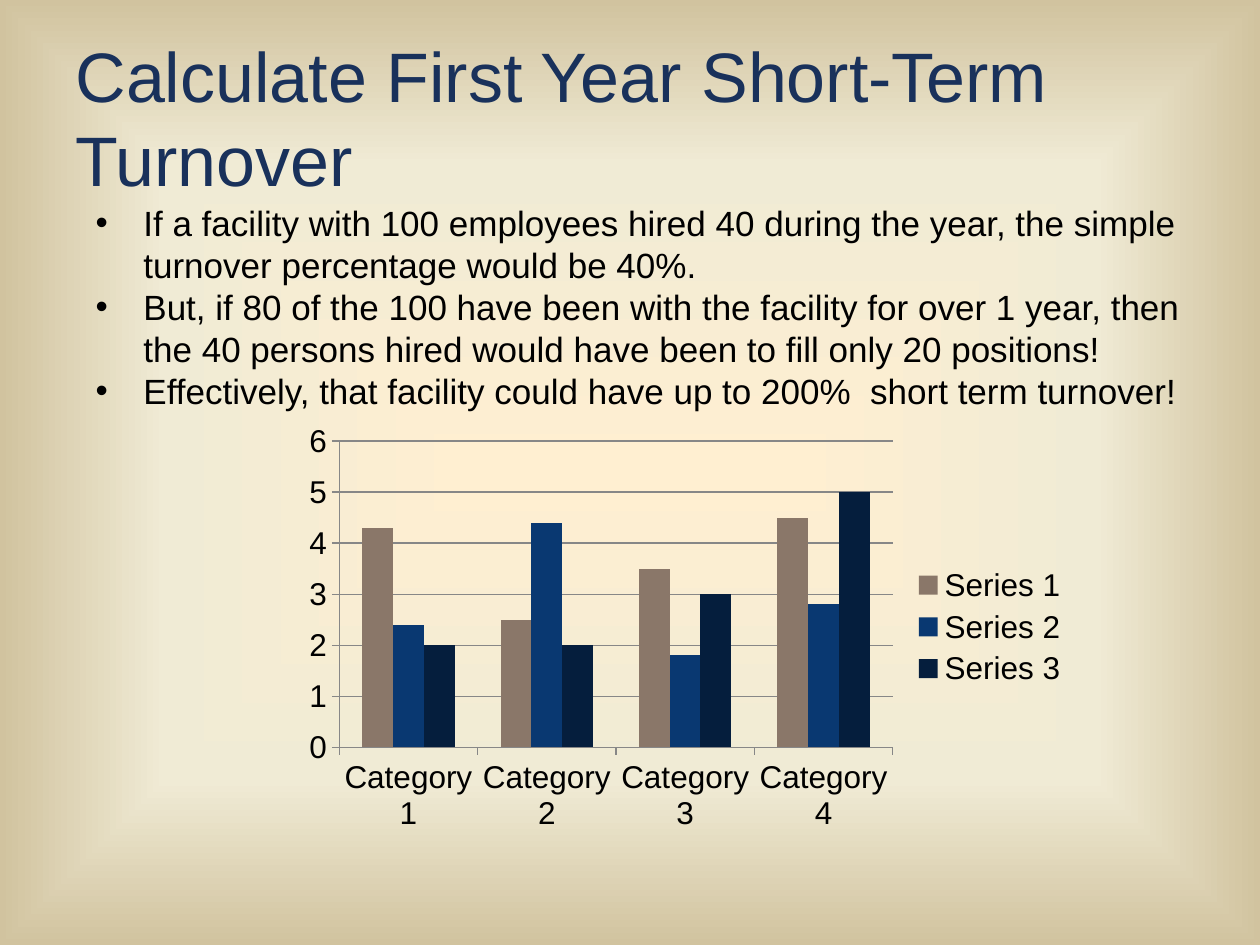
from pptx import Presentation
from pptx.chart.data import CategoryChartData as Data
from pptx.dml.color import RGBColor as RGB
from pptx.enum.chart import XL_CHART_TYPE as Kind, XL_LEGEND_POSITION as Spot, XL_TICK_MARK as Tick
from pptx.enum.text import MSO_ANCHOR as Anchor, PP_ALIGN as Align
from pptx.oxml import parse_xml as to_xml
from pptx.oxml.ns import nsdecls
from pptx.util import Inches, Pt

WIDE, HIGH = 10, 7.5
FONT = "Arial"
NAVY = RGB(0x19, 0x31, 0x5B)
BLACK = RGB(0, 0, 0)
GRAY = RGB(0x87, 0x87, 0x87)
CREAM = RGB(0xFF, 0xEF, 0xD1)
SAND = RGB(0xF0, 0xEB, 0xD5)
TAN = RGB(0xD1, 0xC3, 0x9F)
STOPS = [(0, CREAM), (65, SAND), (100, TAN)]

POINTS = [
    "If a facility with 100 employees hired 40 during the year, the simple turnover percentage would be 40%.",
    "But, if 80 of the 100 have been with the facility for over 1 year, then the 40 persons hired would have been to fill only 20 positions!",
    "Effectively, that facility could have up to 200%  short term turnover!",
]
GROUPS = [f"Category {n}" for n in range(1, 5)]
SERIES = [
    ("Series 1", (4.3, 2.5, 3.5, 4.5), RGB(0x8A, 0x77, 0x69)),
    ("Series 2", (2.4, 4.4, 1.8, 2.8), RGB(0x09, 0x38, 0x71)),
    ("Series 3", (2, 2, 3, 5), RGB(0x05, 0x1E, 0x3D)),
]


def area(left, top, width, height):
    return [Inches(n) for n in (left * WIDE, top * HIGH, width * WIDE, height * HIGH)]


def style(font, size, color):
    font.name, font.size = FONT, Pt(size)
    font.color.rgb = color


def paint(slide):
    stops = "".join(
        f'<a:gs pos="{pos * 1000}"><a:srgbClr val="{color}"/></a:gs>' for pos, color in STOPS
    )
    back = to_xml(
        f'<p:bg {nsdecls("p", "a")}><p:bgPr><a:gradFill><a:gsLst>{stops}</a:gsLst>'
        '<a:path path="shape"><a:fillToRect l="50000" t="50000" r="50000" b="50000"/></a:path>'
        "</a:gradFill><a:effectLst/></p:bgPr></p:bg>"
    )
    slide.element.cSld.insert(0, back)


def bullet(para, indent):
    props = para._p.get_or_add_pPr()
    props.set("marL", str(Inches(indent)))
    props.set("indent", str(-Inches(indent)))
    props.append(to_xml(f'<a:buFont {nsdecls("a")} typeface="{FONT}"/>'))
    props.append(to_xml(f'<a:buChar {nsdecls("a")} char="•"/>'))


def write(shape, lines, size=20, color=BLACK, anchor=Anchor.TOP, indent=0):
    frame = shape.text_frame
    frame.word_wrap = True
    frame.vertical_anchor = anchor
    for n, line in enumerate(lines):
        para = frame.add_paragraph() if n else frame.paragraphs[0]
        para.alignment = Align.LEFT
        if indent:
            bullet(para, indent)
        run = para.add_run()
        run.text = line
        style(run.font, size, color)


def add_title(slide, text, box):
    title = slide.shapes.title
    title.left, title.top, title.width, title.height = box
    write(title, [text], size=40, color=NAVY, anchor=Anchor.MIDDLE)


def rule(line, width):
    line.color.rgb = GRAY
    line.width = Pt(width)


def add_bars(slide, box):
    data = Data()
    data.categories = GROUPS
    for name, vals, _ in SERIES:
        data.add_series(name, vals)
    chart = slide.shapes.add_chart(Kind.COLUMN_CLUSTERED, *box, data).chart
    style(chart.font, 18, BLACK)
    chart.has_title = False
    chart.has_legend = True
    chart.legend.position = Spot.RIGHT
    chart.legend.include_in_layout = False
    plot = chart.plots[0]
    plot.vary_by_categories = False
    plot.gap_width, plot.overlap = 150, 0
    for bars, (_, _, color) in zip(plot.series, SERIES):
        bars.format.fill.solid()
        bars.format.fill.fore_color.rgb = color
    for axis in (chart.category_axis, chart.value_axis):
        axis.major_tick_mark = Tick.OUTSIDE
        rule(axis.format.line, 0.75)
    scale = chart.value_axis
    scale.minimum_scale, scale.maximum_scale, scale.major_unit = 0, 6, 1
    scale.has_major_gridlines = True
    rule(scale.major_gridlines.format.line, 0.75)


def main():
    deck = Presentation()
    deck.slide_width, deck.slide_height = Inches(WIDE), Inches(HIGH)
    slide = deck.slides.add_slide(deck.slide_layouts[5])
    paint(slide)
    add_title(slide, "Calculate First Year Short-Term Turnover", area(0.05, 0.04, 0.9, 1 / 6))
    add_bars(slide, area(0.233, 0.439, 0.625, 0.449))
    notes = slide.shapes.add_textbox(*area(0.066, 0.207, 0.915, 0.237))
    write(notes, POINTS, indent=0.38)
    deck.save("out.pptx")


if __name__ == "__main__":
    main()
